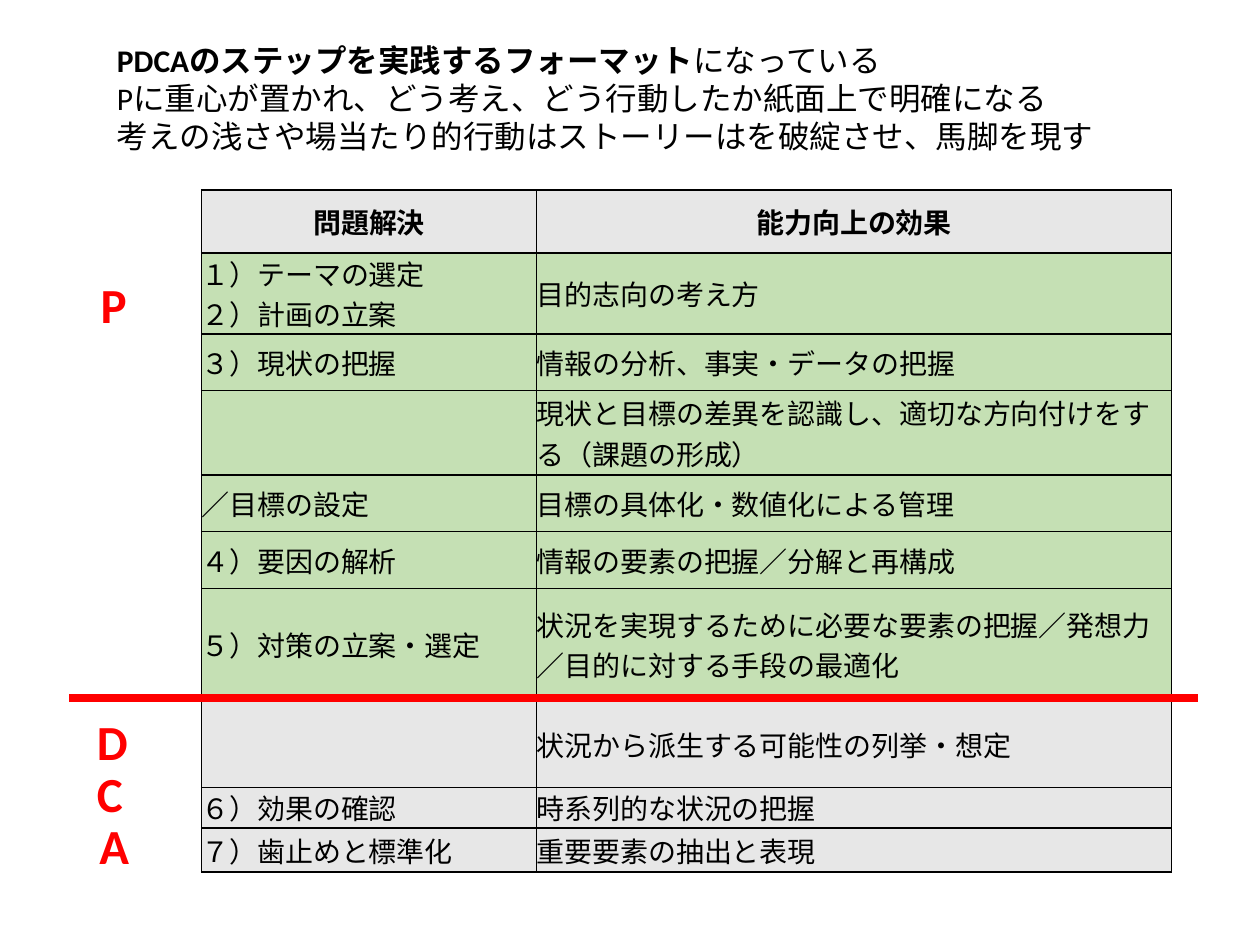
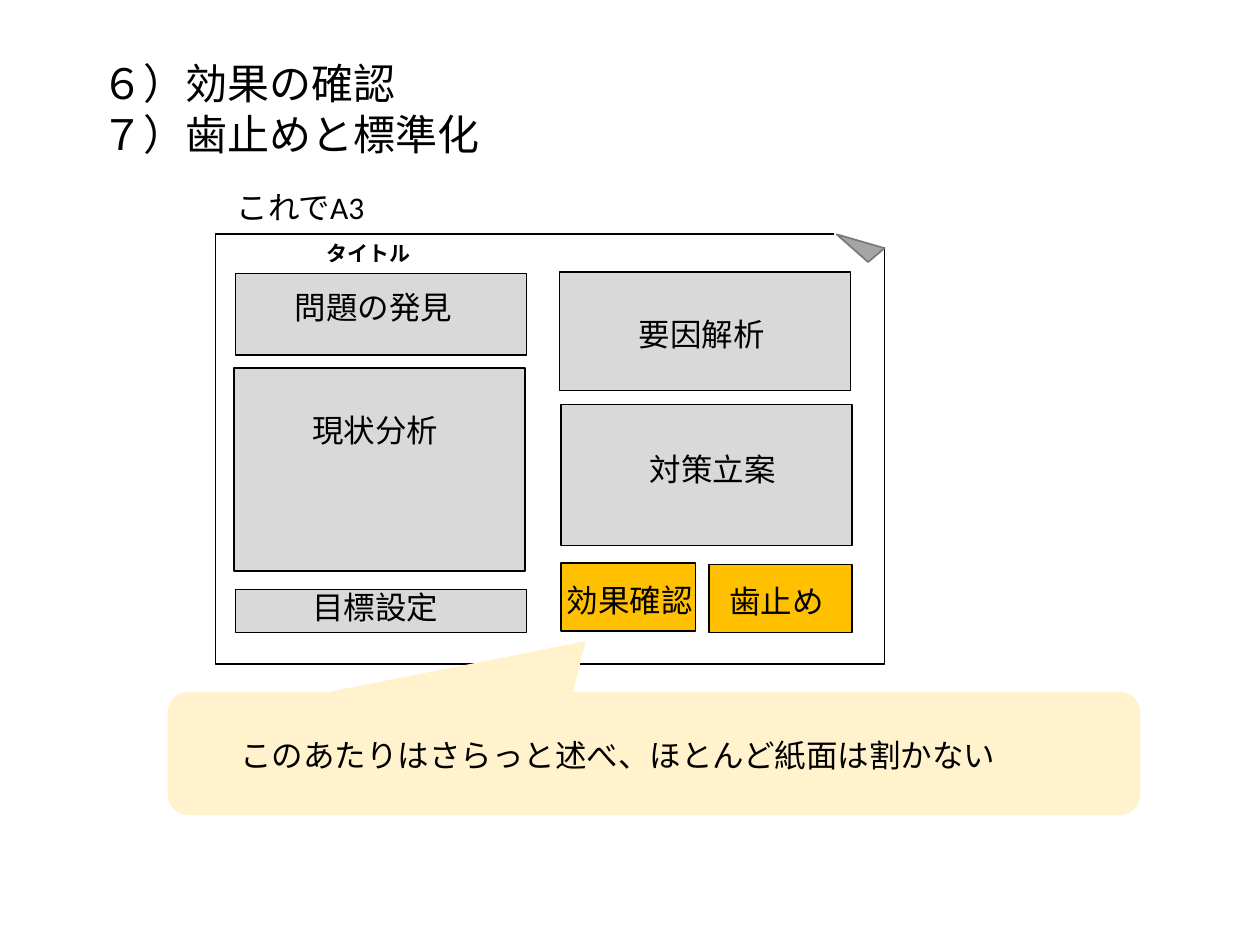
"""Build two slides on the A3 problem-solving format and its PDCA steps."""
from dataclasses import dataclass

from lxml.etree import SubElement
from pptx import Presentation
from pptx.dml.color import RGBColor
from pptx.enum.shapes import MSO_CONNECTOR, MSO_SHAPE as Shape
from pptx.enum.text import MSO_ANCHOR as Anchor, MSO_AUTO_SIZE as AutoSize, PP_ALIGN as Align
from pptx.oxml.ns import qn
from pptx.util import Inches, Pt

COLORS = {
    "black": "000000", "white": "FFFFFF", "red": "FF0000", "header": "E7E7E7",
    "plan": "C5E0B4", "panel": "D9D9D9", "focus": "FFC000", "callout": "FFF2CC",
    "fold": "A5A5A5", "fold_edge": "7A7A7A",
}
LATIN, JAPANESE = "Calibri", "Noto Sans CJK JP"


@dataclass
class Panel:
    left: float
    top: float
    width: float
    height: float
    fill: str = "panel"


@dataclass
class Label:
    text: str
    left: float
    top: float
    width: float = 1.43
    height: float = 0.4
    size: int = 18
    bold: bool = False
    color: str = "black"
    font: str = LATIN


@dataclass
class Step:
    name: str
    effect: str
    height: float
    fill: str = "plan"


STEPS = [
    Step("問題解決", "能力向上の効果", 0.5, "header"),
    Step("１）テーマの選定\n２）計画の立案", "目的志向の考え方", 0.6),
    Step("３）現状の把握", "情報の分析、事実・データの把握", 0.45),
    Step("", "現状と目標の差異を認識し、適切な方向付けをする（課題の形成）", 0.67),
    Step("／目標の設定", "目標の具体化・数値化による管理", 0.45),
    Step("４）要因の解析", "情報の要素の把握／分解と再構成", 0.45),
    Step("５）対策の立案・選定",
         "状況を実現するために必要な要素の把握／発想力／目的に対する手段の最適化", 0.89),
    Step("", "状況から派生する可能性の列挙・想定", 0.69, "header"),
    Step("６）効果の確認", "時系列的な状況の把握", 0.3, "header"),
    Step("７）歯止めと標準化", "重要要素の抽出と表現", 0.35, "header"),
]
PDCA_LABELS = [
    Label(letter, left, top, 0.59, 0.57, 28, True, "red")
    for letter, left, top in [("P", 0.7, 2.13), ("D", 0.67, 5.6),
                              ("C", 0.67, 6.01), ("A", 0.69, 6.42)]
]
PANELS = [
    Panel(1.87, 2.17, 2.31, 0.65),
    Panel(1.86, 2.92, 2.31, 1.61),
    Panel(4.44, 2.16, 2.31, 0.94),
    Panel(1.87, 4.68, 2.31, 0.34),
    Panel(4.45, 3.21, 2.31, 1.12),
    Panel(4.45, 4.47, 1.07, 0.54, "focus"),
    Panel(5.63, 4.48, 1.13, 0.54, "focus"),
]
SHEET_LABELS = [
    Label("問題の発見", 2.24, 2.24, 1.92),
    Label("現状分析", 2.38, 3.21),
    Label("目標設定", 2.38, 4.62),
    Label("対策立案", 5.06, 3.52),
    Label("要因解析", 4.97, 2.45),
    Label("これでA3", 1.78, 1.44, 1.64),
    Label("タイトル", 2.49, 1.86, height=0.3, size=12, bold=True),
    Label("このあたりはさらっと述べ、ほとんど紙面は割かない", 1.81, 5.79, 7.24),
    Label("効果確認", 4.4, 4.56),
    Label("歯止め", 5.69, 4.57),
]


def rgb(name: str) -> RGBColor:
    return RGBColor.from_string(COLORS[name])


def add_span(para, text: str, *, size: int = 18, bold: bool = False,
             color: str = "black", font: str = LATIN, east_asian: str = "") -> None:
    span = para.add_run()
    span.text = text
    span.font.size, span.font.bold, span.font.name = Pt(size), bold, font
    span.font.color.rgb = rgb(color)
    if east_asian:
        SubElement(span.font._element, qn("a:ea"), typeface=east_asian)


def add_label(slide, label: Label, bold_lead: str = "") -> None:
    box = slide.shapes.add_textbox(Inches(label.left), Inches(label.top),
                                   Inches(label.width), Inches(label.height))
    frame = box.text_frame
    frame.word_wrap = True
    frame.auto_size = AutoSize.SHAPE_TO_FIT_TEXT
    style = dict(size=label.size, color=label.color, font=label.font)
    for index, line in enumerate(label.text.split("\n")):
        para = frame.add_paragraph() if index else frame.paragraphs[0]
        if bold_lead and index == 0:
            add_span(para, bold_lead, bold=True, **style)
        add_span(para, line, bold=label.bold, **style)


def paint(shape, fill: str = "", line: str = "", width: float = 1) -> None:
    shape.shadow.inherit = False
    if fill:
        shape.fill.solid()
        shape.fill.fore_color.rgb = rgb(fill)
    else:
        shape.fill.background()
    if line:
        shape.line.color.rgb = rgb(line)
        shape.line.width = Pt(width)
    else:
        shape.line.fill.background()


def add_panel(shapes, panel: Panel, kind=Shape.RECTANGLE, line: str = "black"):
    shape = shapes.add_shape(kind, Inches(panel.left), Inches(panel.top),
                             Inches(panel.width), Inches(panel.height))
    paint(shape, panel.fill, line)
    return shape


def add_outline(shapes, points: list[tuple[float, float]], closed: bool):
    corners = [(Inches(x), Inches(y)) for x, y in points]
    builder = shapes.build_freeform(*corners[0])
    builder.add_line_segments(corners[1:], close=closed)
    return builder.convert_to_shape()


def fill_cell(cell, text: str, fill: str, heading: bool) -> None:
    cell.margin_left = cell.margin_right = cell.margin_top = cell.margin_bottom = 0
    cell.vertical_anchor = Anchor.MIDDLE
    properties = cell._tc.get_or_add_tcPr()
    for side in ("lnL", "lnR", "lnT", "lnB"):
        border = SubElement(properties, qn(f"a:{side}"), w=str(Pt(1)))
        solid = SubElement(border, qn("a:solidFill"))
        SubElement(solid, qn("a:srgbClr"), val=COLORS["black"])
    cell.fill.solid()
    cell.fill.fore_color.rgb = rgb(fill)
    para = cell.text_frame.paragraphs[0]
    para.alignment = Align.CENTER if heading else Align.LEFT
    for index, line in enumerate(text.split("\n") if text else []):
        if index:
            para.add_line_break()
        add_span(para, line, size=16, bold=heading, east_asian=JAPANESE)


def add_step_table(slide) -> None:
    widths = (2.66, 5.04)
    frame = slide.shapes.add_table(len(STEPS), len(widths), Inches(1.6), Inches(1.51),
                                   Inches(sum(widths)),
                                   Inches(sum(step.height for step in STEPS)))
    table = frame.table
    table.first_row = table.horz_banding = False
    for column, width in zip(table.columns, widths):
        column.width = Inches(width)
    for index, (row, step) in enumerate(zip(table.rows, STEPS)):
        row.height = Inches(step.height)
        for cell, text in zip(row.cells, (step.name, step.effect)):
            fill_cell(cell, text, step.fill, heading=index == 0)


def build_pdca_slide(slide) -> None:
    add_step_table(slide)
    divider = slide.shapes.add_connector(MSO_CONNECTOR.STRAIGHT, Inches(0.55), Inches(5.54),
                                         Inches(9.51), Inches(5.54))
    divider.line.color.rgb = rgb("red")
    divider.line.width = Pt(4.5)
    SubElement(divider._element.spPr, qn("a:effectLst"))
    for label in PDCA_LABELS:
        add_label(slide, label)
    summary = Label("になっている\n"
                    "Pに重心が置かれ、どう考え、どう行動したか紙面上で明確になる\n"
                    "考えの浅さや場当たり的行動はストーリーはを破綻させ、馬脚を現す",
                    0.83, 0.28, 8.85, 1.01)
    add_label(slide, summary, bold_lead="PDCAのステップを実践するフォーマット")


def build_sheet_slide(slide) -> None:
    sheet = slide.shapes.add_group_shape().shapes
    add_panel(sheet, Panel(1.71, 1.86, 5.31, 3.41, "white"))
    corner = add_outline(sheet, [(6.62, 1.85), (7.03, 1.85), (7.03, 1.96)], closed=False)
    paint(corner, line="white", width=3)
    fold = add_outline(sheet, [(6.64, 1.86), (7.02, 1.97), (6.89, 2.08)], closed=True)
    paint(fold, "fold", "fold_edge")
    add_label(slide, Label("６）効果の確認\n７）歯止めと標準化", 0.71, 0.41, 5, 0.91,
                           size=24, font=JAPANESE))
    for panel in PANELS:
        add_panel(slide.shapes, panel)
    callout = add_panel(slide.shapes, Panel(1.33, 5.49, 7.72, 0.98, "callout"),
                        Shape.ROUNDED_RECTANGULAR_CALLOUT, line="")
    for index, value in enumerate((-0.074, -0.905, 0.167)):
        callout.adjustments[index] = round(value, 2)
    for label in SHEET_LABELS:
        add_label(slide, label)


def main() -> None:
    deck = Presentation()
    deck.slide_width, deck.slide_height = Inches(10), Inches(7.5)
    for build in (build_pdca_slide, build_sheet_slide):
        build(deck.slides.add_slide(deck.slide_layouts[6]))
    deck.save("out.pptx")


if __name__ == "__main__":
    main()
